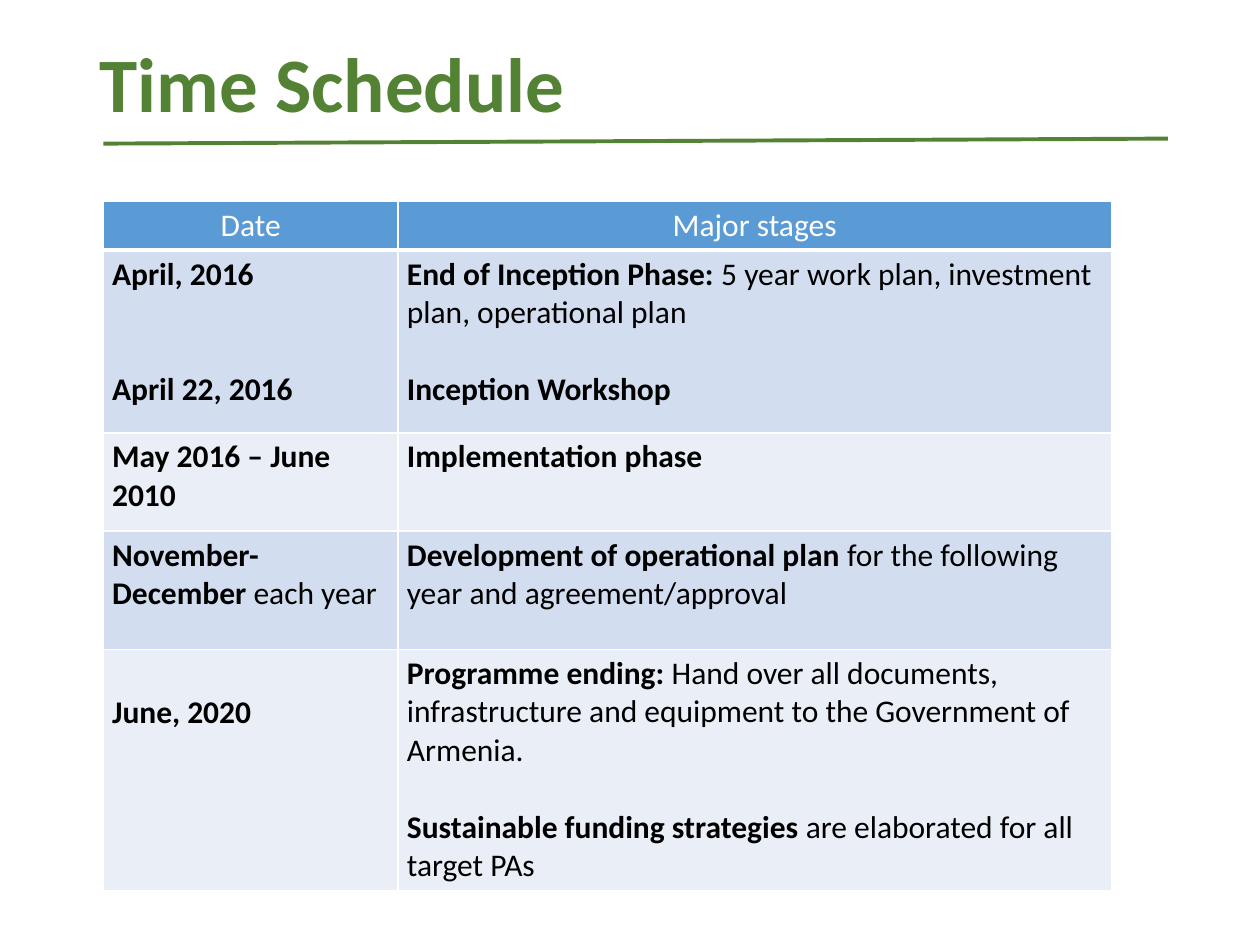
from lxml.etree import SubElement
from pptx import Presentation
from pptx.dml.color import RGBColor
from pptx.enum.shapes import MSO_CONNECTOR as Conn
from pptx.enum.text import MSO_ANCHOR as Anchor, PP_ALIGN as Align
from pptx.oxml.ns import qn
from pptx.util import Inches, Pt

GREEN = RGBColor(0x54, 0x82, 0x35)
BLUE = RGBColor(0x5B, 0x9B, 0xD5)
BAND = RGBColor(0xD2, 0xDE, 0xEF)
PALE = RGBColor(0xEA, 0xEF, 0xF7)
WHITE = RGBColor(0xFF, 0xFF, 0xFF)
BLACK = RGBColor(0, 0, 0)

LINE = 22  # height in points of one line of table text
COLS = [2.34, 5.66]
ROWS = [0.37, 1.45, 0.78, 0.94, 1.9]
HEADS = ["Date", "Major stages"]

# A cell is a list of (lines skipped above, bold text, plain text).
STAGES = [
    ([(0, "April, 2016", ""), (2, "April 22, 2016", "")],
     [(0, "End of Inception Phase: ",
       "5 year work plan, investment plan, operational plan"),
      (1, "Inception Workshop", "")]),
    ([(0, "May 2016 – June 2010", "")],
     [(0, "Implementation phase", "")]),
    ([(0, "November-December ", "each year")],
     [(0, "Development of operational plan ",
       "for the following year and agreement/approval")]),
    ([(1, "June, 2020", "")],
     [(0, "Programme ending:",
       " Hand over all documents, infrastructure and equipment"
       " to the Government of Armenia."),
      (1, "Sustainable funding strategies ",
       "are elaborated for all target PAs")]),
]


class Deck:
    def __init__(self, font="Calibri", size=18):
        self.font, self.size = font, size
        self.prs = Presentation()
        self.prs.slide_width = Inches(10)
        self.prs.slide_height = Inches(7.5)
        self.slide = self.prs.slides.add_slide(self.prs.slide_layouts[5])

    def style(self, font, color, size=None):
        font.name = self.font
        font.size = Pt(size or self.size)
        font.color.rgb = color

    def title(self, text, left, top, width, height):
        shape = self.slide.shapes.title
        shape.left, shape.top = Inches(left), Inches(top)
        shape.width, shape.height = Inches(width), Inches(height)
        frame = shape.text_frame
        frame.text = text
        frame.vertical_anchor = Anchor.MIDDLE
        para = frame.paragraphs[0]
        para.alignment = Align.LEFT
        para.line_spacing = 0.9
        self.style(para.font, GREEN, 44)
        para.font.bold = True

    def rule(self, x1, y1, x2, y2):
        line = self.slide.shapes.add_connector(
            Conn.STRAIGHT, Inches(x1), Inches(y1), Inches(x2), Inches(y2))
        line.line.color.rgb = GREEN
        line.line.width = Pt(2.25)
        SubElement(line._element.spPr, qn("a:effectLst"))

    def frame(self, cell, fill, base=1):
        """Set the white borders, the fill and the margins of a cell."""
        props = cell._tc.get_or_add_tcPr()
        for side in "LRTB":
            width = base if side == "B" else 1
            edge = SubElement(props, qn(f"a:ln{side}"), w=str(Pt(width)))
            solid = SubElement(edge, qn("a:solidFill"))
            SubElement(solid, qn("a:srgbClr"), val=str(WHITE))
        cell.fill.solid()
        cell.fill.fore_color.rgb = fill
        cell.margin_left = cell.margin_right = Inches(0.07)
        cell.margin_top = cell.margin_bottom = Inches(0.04)

    def head(self, cell, text):
        self.frame(cell, BLUE, base=3)
        cell.text = text
        para = cell.text_frame.paragraphs[0]
        para.alignment = Align.CENTER
        self.style(para.font, WHITE)
        para.font.bold = False

    def body(self, cell, paras, fill):
        self.frame(cell, fill)
        text = cell.text_frame
        for i, (skip, bold, plain) in enumerate(paras):
            para = text.add_paragraph() if i else text.paragraphs[0]
            if i:
                para.space_before = Pt(skip * LINE)
            else:
                cell.margin_top += Pt(skip * LINE)
            self.style(para.font, BLACK)
            for words, heavy in ((bold, True), (plain, False)):
                if words:
                    run = para.add_run()
                    run.text = words
                    run.font.bold = heavy

    def table(self, left, top):
        table = self.slide.shapes.add_table(
            len(ROWS), len(COLS), Inches(left), Inches(top),
            Inches(sum(COLS)), Inches(sum(ROWS))).table
        for col, width in zip(table.columns, COLS):
            col.width = Inches(width)
        for row, height in zip(table.rows, ROWS):
            row.height = Inches(height)
        for c, text in enumerate(HEADS):
            self.head(table.cell(0, c), text)
        for r, stage in enumerate(STAGES, 1):
            for c, paras in enumerate(stage):
                self.body(table.cell(r, c), paras, BAND if r % 2 else PALE)


def main():
    deck = Deck()
    deck.title("Time Schedule", 0.69, 0.29, 8.62, 0.81)
    deck.rule(0.82, 1.14, 9.27, 1.1)
    deck.table(0.82, 1.6)
    deck.prs.save("out.pptx")


if __name__ == "__main__":
    main()
